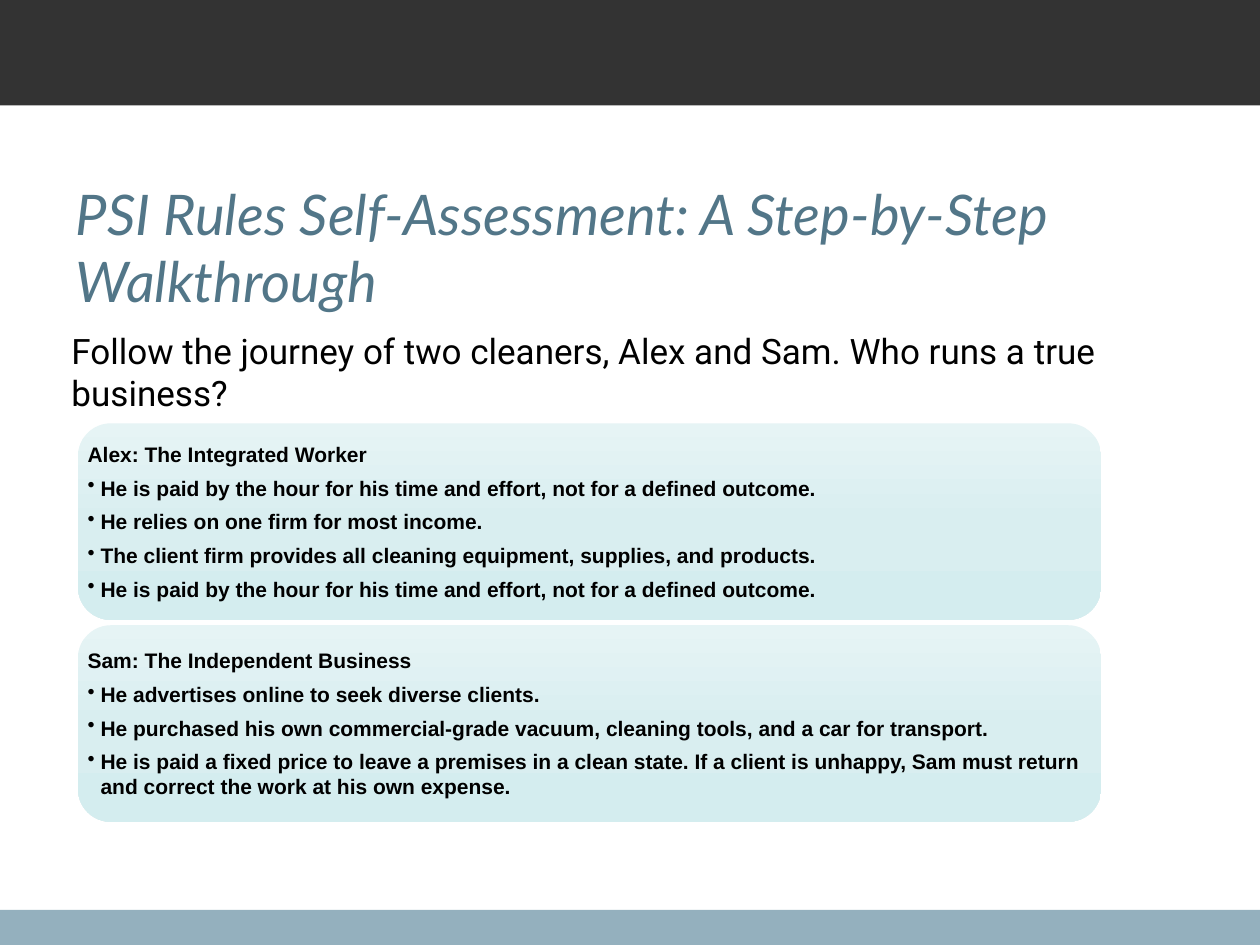
from pptx import Presentation
from pptx.dml.color import RGBColor
from pptx.enum.shapes import MSO_SHAPE
from pptx.enum.text import MSO_ANCHOR, PP_ALIGN
from pptx.util import Pt
from copy import deepcopy
from lxml.etree import SubElement
from pptx.oxml.ns import qn

CHARCOAL = RGBColor(0x33, 0x33, 0x33)
STEEL = RGBColor(0x94, 0xB0, 0xBE)
TITLE_BLUE = RGBColor(0x52, 0x76, 0x88)
BLACK = RGBColor(0, 0, 0)
CARD_GRADIENT = [
    RGBColor(0xE6, 0xF4, 0xF5),
    RGBColor(0xD9, 0xEE, 0xF0),
    RGBColor(0xD4, 0xED, 0xEF),
]

TITLE_FORMAT = {"name": "Lato", "size": Pt(32), "italic": True}
QUESTION_FORMAT = {"name": "Roboto", "size": Pt(20)}
CARD_FORMAT = {"name": "Arial", "size": Pt(12), "bold": True}

CLEANERS = [
    ("Alex: The Integrated Worker", [
        "He is paid by the hour for his time and effort, not for a defined outcome.",
        "He relies on one firm for most income.",
        "The client firm provides all cleaning equipment, supplies, and products.",
        "He is paid by the hour for his time and effort, not for a defined outcome.",
    ]),
    ("Sam: The Independent Business", [
        "He advertises online to seek diverse clients.",
        "He purchased his own commercial-grade vacuum, cleaning tools, and a car for transport.",
        "He is paid a fixed price to leave a premises in a clean state. If a client is "
        "unhappy, Sam must return and correct the work at his own expense.",
    ]),
]
CARD_TOP, CARD_HEIGHT, CARD_PITCH = 241.9, 112.3, 115.4
BULLET_INDENT = Pt(7.4)


def set_font(paragraph, values, color):
    for attribute, value in values.items():
        setattr(paragraph.font, attribute, value)
    paragraph.font.color.rgb = color


def add_block(kind, left, top, width, height):
    """Add a preset shape without outline or shadow."""
    block = slide.shapes.add_shape(kind, Pt(left), Pt(top), Pt(width), Pt(height))
    block.shadow.inherit = False
    block.line.fill.background()
    return block


prs = Presentation()
prs.slide_width, prs.slide_height = Pt(720), Pt(540)
slide = prs.slides.add_slide(prs.slide_layouts[5])

# Header and footer bands
for top, height, color in [(520, 20, STEEL), (0, 60.2, CHARCOAL)]:
    band = add_block(MSO_SHAPE.RECTANGLE, 0, top, 720, height)
    band.fill.solid()
    band.fill.fore_color.rgb = color

# Title
title = slide.shapes.title
title.left, title.top, title.width, title.height = Pt(36), Pt(96), Pt(648), Pt(90)
title.text_frame.text = "PSI Rules Self-Assessment: A Step-by-Step Walkthrough"
title.text_frame.vertical_anchor = MSO_ANCHOR.MIDDLE
heading = title.text_frame.paragraphs[0]
heading.alignment = PP_ALIGN.LEFT
set_font(heading, TITLE_FORMAT, TITLE_BLUE)

# One card per cleaner
for index, (cleaner, traits) in enumerate(CLEANERS):
    card = add_block(MSO_SHAPE.ROUNDED_RECTANGLE, 44.6, CARD_TOP + index * CARD_PITCH,
                     584.6, CARD_HEIGHT)
    card.fill.gradient()
    card.fill.gradient_angle = 270
    first_stop = card.fill._fill._gradFill.gsLst[0]
    first_stop.addnext(deepcopy(first_stop))
    for stop, position, color in zip(card.fill.gradient_stops, (0, 0.5, 1), CARD_GRADIENT):
        stop.position = position
        stop.color.rgb = color

    frame = card.text_frame
    frame.word_wrap = True
    frame.vertical_anchor = MSO_ANCHOR.MIDDLE
    for side in ("left", "top", "right", "bottom"):
        setattr(frame, f"margin_{side}", 0)
    frame.text = "\n".join([cleaner, *traits])
    for number, paragraph in enumerate(frame.paragraphs):
        paragraph.alignment = PP_ALIGN.LEFT
        paragraph.space_after = Pt(4.8)
        if number > 0:
            properties = paragraph._p.get_or_add_pPr()
            properties.set("marL", str(BULLET_INDENT))
            properties.set("indent", str(-BULLET_INDENT))
            SubElement(properties, qn("a:buChar"), char="•")
        set_font(paragraph, CARD_FORMAT, BLACK)

# Opening question
question = slide.shapes.add_textbox(Pt(33.8), Pt(185), Pt(674.6), Pt(55.4)).text_frame
question.word_wrap = True
question.text = "Follow the journey of two cleaners, Alex and Sam. Who runs a true business?"
set_font(question.paragraphs[0], QUESTION_FORMAT, BLACK)

prs.save("out.pptx")
